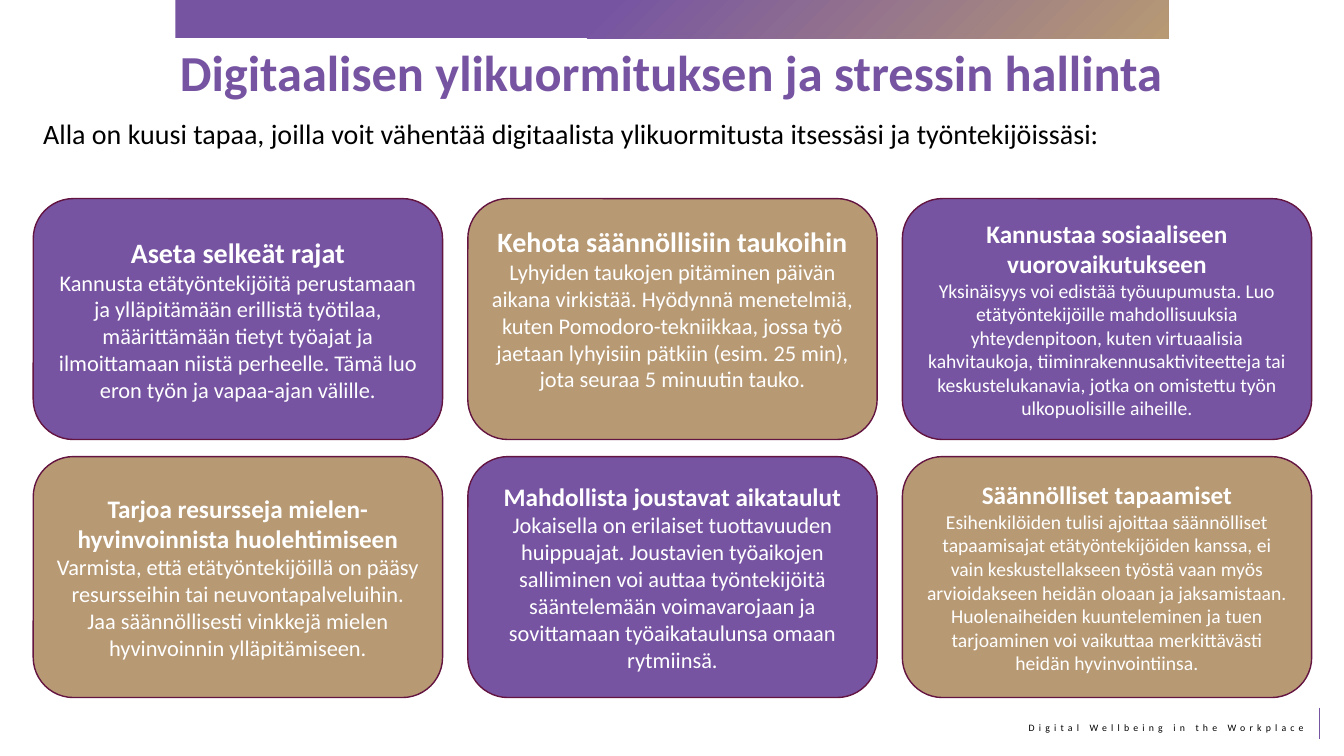
from dataclasses import dataclass

from lxml import etree
from pptx import Presentation
from pptx.dml.color import RGBColor
from pptx.enum import shapes, text
from pptx.oxml import ns
from pptx.util import Inches, Pt


@dataclass(frozen=True)
class Theme:
    font: str = "Calibri"
    purple: str = "7654A2"
    tan: str = "B79974"
    outline: str = "631440"
    white: str = "FFFFFF"
    black: str = "000000"
    title: int = 36
    large: int = 20
    medium: int = 18
    body: int = 16
    small: int = 14
    footer: int = 7


class PageBuilder:
    def __init__(self, page, theme):
        self.page = page
        self.theme = theme

    def add_span(self, para, words, size, color, bold=False, align=text.PP_ALIGN.CENTER):
        para.alignment = align
        span = para.add_run()
        span.text = words
        span.font.name = self.theme.font
        span.font.size = Pt(size)
        span.font.bold = bold
        span.font.color.rgb = RGBColor.from_string(color)
        return span

    def title(self, words, left, top, width, height):
        box = self.page.shapes.title
        box.left, box.top = Inches(left), Inches(top)
        box.width, box.height = Inches(width), Inches(height)
        frame = box.text_frame
        frame.auto_size = text.MSO_AUTO_SIZE.NONE
        frame.vertical_anchor = text.MSO_ANCHOR.TOP
        self.add_span(frame.paragraphs[0], words, self.theme.title, self.theme.purple, True)

    def label(self, words, left, top, width, height, size, align):
        box = self.page.shapes.add_textbox(
            Inches(left), Inches(top), Inches(width), Inches(height))
        box.text_frame.word_wrap = True
        return self.add_span(box.text_frame.paragraphs[0], words, size,
                             self.theme.black, align=align)

    def shape(self, kind, left, top, width, height):
        box = self.page.shapes.add_shape(
            kind, Inches(left), Inches(top), Inches(width), Inches(height))
        box.shadow.inherit = False
        return box

    def band(self, left, top, width, height):
        box = self.shape(shapes.MSO_SHAPE.RECTANGLE, left, top, width, height)
        box.line.fill.background()
        # Radial gradient centred on the lower right corner
        gradient = etree.fromstring(
            f'<a:gradFill {ns.nsdecls("a")} rotWithShape="1"><a:gsLst>'
            f'<a:gs pos="0"><a:srgbClr val="{self.theme.tan}"/></a:gs>'
            f'<a:gs pos="58000"><a:srgbClr val="{self.theme.purple}"/></a:gs>'
            '</a:gsLst><a:path path="circle">'
            '<a:fillToRect l="100000" t="100000"/></a:path></a:gradFill>')
        geometry = box._element.spPr.find(ns.qn("a:prstGeom"))
        geometry.addnext(gradient)

    def card(self, left, top, width, height, fill, heading, heading_size,
             body, body_size, bottom_inset):
        box = self.shape(shapes.MSO_SHAPE.ROUNDED_RECTANGLE, left, top, width, height)
        box.fill.solid()
        box.fill.fore_color.rgb = RGBColor.from_string(fill)
        box.line.color.rgb = RGBColor.from_string(self.theme.outline)
        box.line.width = Pt(1)
        frame = box.text_frame
        frame.word_wrap = True
        frame.vertical_anchor = text.MSO_ANCHOR.MIDDLE
        frame.margin_bottom = Inches(bottom_inset)
        self.add_span(frame.paragraphs[0], heading, heading_size, self.theme.white, True)
        self.add_span(frame.add_paragraph(), body, body_size, self.theme.white)

    def rule(self, x, top, bottom):
        line = self.page.shapes.add_connector(
            shapes.MSO_CONNECTOR.STRAIGHT, Inches(x), Inches(top), Inches(x), Inches(bottom))
        line.line.color.rgb = RGBColor.from_string(self.theme.purple)
        line.line.width = Pt(0.75)
        etree.SubElement(line._element.spPr, ns.qn("a:effectLst"))


def main():
    theme = Theme()
    deck = Presentation()
    deck.slide_width, deck.slide_height = Inches(13.33), Inches(7.5)
    page = deck.slides.add_slide(deck.slide_layouts.get_by_name("Title Only"))
    builder = PageBuilder(page, theme)

    # Top band and footer
    builder.band(1.74, 0, 9.85, 0.38)
    footer = builder.label("Digital Wellbeing in the Workplace", 9.68, 7.11, 3.35, 0.22,
                           theme.footer, text.PP_ALIGN.RIGHT)
    footer.font._element.set("spc", "300")
    builder.rule(13.09, 7.02, 7.33)

    # Title and introduction
    builder.title("Digitaalisen ylikuormituksen ja stressin hallinta", 0.93, 0.36, 11.46, 0.88)
    builder.label("Alla on kuusi tapaa, joilla voit vähentää digitaalista ylikuormitusta "
                  "itsessäsi ja työntekijöissäsi:", 0.33, 1.11, 11.46, 0.44,
                  theme.large, text.PP_ALIGN.LEFT)

    # Six cards: heading, its size, body, its size, bottom inset
    cards = [
        ("Aseta selkeät rajat", theme.large,
         "Kannusta etätyöntekijöitä perustamaan ja ylläpitämään erillistä työtilaa, "
         "määrittämään tietyt työajat ja ilmoittamaan niistä perheelle. Tämä luo eron "
         "työn ja vapaa-ajan välille.", theme.body, 0.05),
        ("Kehota säännöllisiin taukoihin", theme.large,
         "Lyhyiden taukojen pitäminen päivän aikana virkistää. Hyödynnä menetelmiä, "
         "kuten Pomodoro-tekniikkaa, jossa työ jaetaan lyhyisiin pätkiin (esim. 25 min), "
         "jota seuraa 5 minuutin tauko.", theme.body, 0.26),
        ("Kannustaa sosiaaliseen vuorovaikutukseen", theme.medium,
         "Yksinäisyys voi edistää työuupumusta. Luo etätyöntekijöille mahdollisuuksia "
         "yhteydenpitoon, kuten virtuaalisia kahvitaukoja, tiiminrakennusaktiviteetteja "
         "tai keskustelukanavia, jotka on omistettu työn ulkopuolisille aiheille.",
         theme.small, 0.05),
        ("Tarjoa resursseja mielen-hyvinvoinnista huolehtimiseen", theme.medium,
         "Varmista, että etätyöntekijöillä on pääsy resursseihin tai neuvontapalveluihin. "
         "Jaa säännöllisesti vinkkejä mielen hyvinvoinnin ylläpitämiseen.", theme.body, 0.05),
        ("Mahdollista joustavat aikataulut", theme.medium,
         "Jokaisella on erilaiset tuottavuuden huippuajat. Joustavien työaikojen salliminen "
         "voi auttaa työntekijöitä sääntelemään voimavarojaan ja sovittamaan "
         "työaikataulunsa omaan rytmiinsä.", theme.body, 0.05),
        ("Säännölliset tapaamiset", theme.medium,
         "Esihenkilöiden tulisi ajoittaa säännölliset tapaamisajat etätyöntekijöiden kanssa, "
         "ei vain keskustellakseen työstä vaan myös arvioidakseen heidän oloaan ja "
         "jaksamistaan. Huolenaiheiden kuunteleminen ja tuen tarjoaminen voi vaikuttaa "
         "merkittävästi heidän hyvinvointiinsa.", theme.small, 0.05),
    ]
    fills = (theme.purple, theme.tan)
    for index, card in enumerate(cards):
        row, column = divmod(index, 3)
        builder.card(0.33 + column * 4.31, 1.97 + row * 2.56, 4.06, 2.39,
                     fills[index % 2], *card)

    deck.save("out.pptx")


if __name__ == "__main__":
    main()
